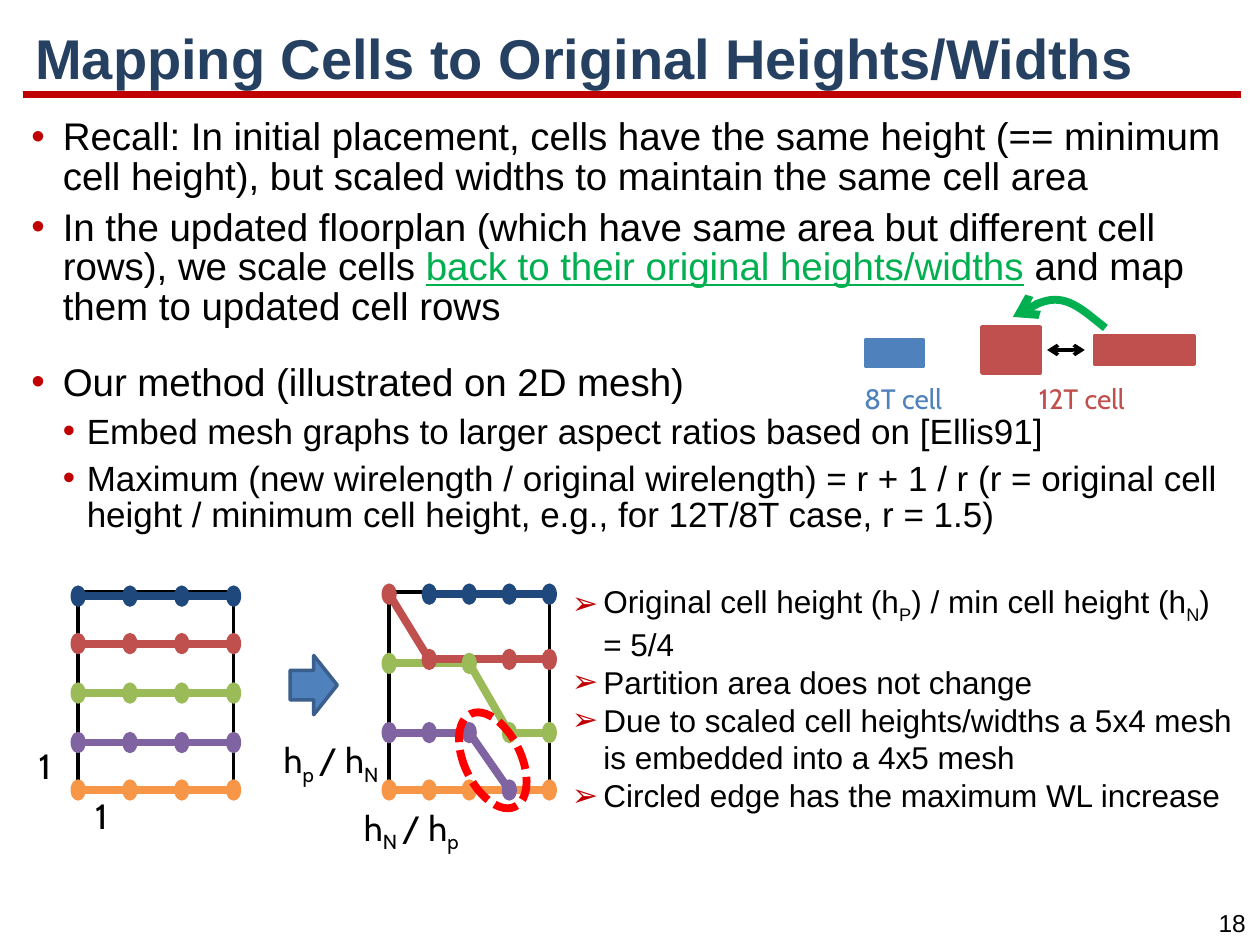
from dataclasses import dataclass

from lxml.etree import SubElement
from pptx import Presentation
from pptx.dml.color import RGBColor
from pptx.enum.dml import MSO_LINE
from pptx.enum.shapes import MSO_CONNECTOR, MSO_SHAPE
from pptx.enum.text import MSO_ANCHOR, MSO_AUTO_SIZE, PP_ALIGN
from pptx.oxml.ns import qn
from pptx.util import Inches, Pt


@dataclass(frozen=True)
class Theme:
    font: str = "Arial"
    label_font: str = "Cabin"
    ink: str = "000000"
    heading: str = "254061"
    accent: str = "C00000"
    emphasis: str = "00B050"
    circle: str = "FF0000"
    navy: str = "1F497D"
    red: str = "C0504D"
    green: str = "9BBB59"
    purple: str = "8064A2"
    orange: str = "F79646"
    blue: str = "4F81BD"
    blue_edge: str = "3A5F8C"
    title: int = 32
    body: int = 22
    sub: int = 20
    notes: int = 18
    cell_label: int = 16
    page: int = 14
    thin: float = 2
    thick: float = 4.5


T = Theme()
SUB = {"base": -25000}


@dataclass(frozen=True)
class Box:
    """Left, top, width and height on a grid of 100 columns by 75 rows."""
    x: float
    y: float
    w: float
    h: float

    def at(self, fx, fy):
        return self.x + fx * self.w, self.y + fy * self.h

    def share(self, fx, fy, fw, fh):
        return Box(*self.at(fx, fy), fw * self.w, fh * self.h)

    def emu(self):
        return [grid(n) for n in (self.x, self.y, self.w, self.h)]


def grid(n):
    return Inches(n / 10)


def rgb(color):
    return RGBColor.from_string(color)


def stroke(line, color, width):
    line.color.rgb = rgb(color)
    line.width = Pt(width)


def arrowheads(shape, *ends):
    ln = shape.line._get_or_add_ln()
    for end in ends:
        SubElement(ln, qn(f"a:{end}"), type="arrow")


def draw(slide, kind, box, fill=None, edge=None, width=T.thin):
    shape = slide.shapes.add_shape(kind, *box.emu())
    shape.shadow.inherit = False
    if fill:
        shape.fill.solid()
        shape.fill.fore_color.rgb = rgb(fill)
    else:
        shape.fill.background()
    if edge:
        stroke(shape.line, edge, width)
    else:
        shape.line.fill.background()
    return shape


def link(slide, start, end, color, width=T.thick):
    connector = slide.shapes.add_connector(
        MSO_CONNECTOR.STRAIGHT, *[grid(n) for n in (*start, *end)])
    stroke(connector.line, color, width)
    SubElement(connector._element.spPr, qn("a:effectLst"))
    return connector


def add_runs(paragraph, runs, size, color=T.ink, font=T.font):
    """Each run is a string, or a string with its own settings."""
    for item in runs:
        words, style = (item, {}) if isinstance(item, str) else item
        if words == "\n":
            paragraph.add_line_break()
            continue
        run = paragraph.add_run()
        run.text = words
        run.font.name, run.font.size = font, Pt(size)
        run.font.color.rgb = rgb(style.get("color", color))
        run.font.underline = style.get("underline")
        if "base" in style:
            run._r.get_or_add_rPr().set("baseline", str(style["base"]))


def bullet(paragraph, mark, left, hang):
    pPr = paragraph._p.get_or_add_pPr()
    pPr.set("marL", str(Inches(left)))
    pPr.set("indent", str(-Inches(hang)))
    SubElement(SubElement(pPr, qn("a:buClr")), qn("a:srgbClr"), val=T.accent)
    SubElement(pPr, qn("a:buFont"), typeface=T.font)
    SubElement(pPr, qn("a:buChar"), char=mark)


def text_frame(slide, box, wrap=True):
    frame = slide.shapes.add_textbox(*box.emu()).text_frame
    frame.word_wrap = wrap
    return frame


def label(slide, box, runs, size=T.sub, color=T.ink):
    add_runs(text_frame(slide, box).paragraphs[0], runs, size, color, T.label_font)


def paragraphs(frame, count):
    return [frame.paragraphs[0]] + [frame.add_paragraph() for _ in range(count - 1)]


def heading(slide, box):
    link(slide, (1.8, 7.5), (98.5, 7.5), T.accent)
    title = slide.shapes.title
    title.left, title.top, title.width, title.height = box.emu()
    frame = title.text_frame
    frame.auto_size = MSO_AUTO_SIZE.NONE
    frame.vertical_anchor = MSO_ANCHOR.MIDDLE
    paragraph = frame.paragraphs[0]
    paragraph.alignment, paragraph.line_spacing = PP_ALIGN.LEFT, 0.9
    add_runs(paragraph, ["Mapping Cells to Original Heights/Widths"], T.title, T.heading)
    paragraph.runs[0].font.bold = True


def main_points(slide, box):
    marked = {"color": T.emphasis, "underline": True}
    points = [
        (0, 7, ["Recall: In initial placement, cells have the same height (== minimum "
                "cell height), but scaled widths to maintain the same cell area"]),
        (0, 7, ["In the updated floorplan (which have same area but different cell rows), "
                "we scale cells ", ("back to their original heights/widths", marked),
                " ", "and map them to updated cell rows"]),
        (0, 21, ["Our method (illustrated on 2D mesh)"]),
        (1, 6.6, ["Embed mesh graphs to larger aspect ratios based on [Ellis91]"]),
        (1, 6.6, ["Maximum (new wirelength / original wirelength) = r + 1 / r (r = original "
                  "cell height / minimum cell height, e.g., for 12T/8T case, r = 1.5)"]),
    ]
    frame = text_frame(slide, box)
    for paragraph, (level, gap, runs) in zip(paragraphs(frame, len(points)), points):
        paragraph.level, paragraph.line_spacing = level, 0.85
        paragraph.space_before = Pt(gap)
        bullet(paragraph, "•", *((0.25, 0.25), (0.44, 0.19))[level])
        add_runs(paragraph, runs, (T.body, T.sub)[level])


def mesh(slide, box, columns, paths):
    """Paths hold a colour and nodes, each a column number and a share of the height."""
    draw(slide, MSO_SHAPE.RECTANGLE, box, edge=T.ink)
    routes = [(color, [box.at(col / (columns - 1), y) for col, y in nodes])
              for color, nodes in paths]
    for color, nodes in reversed(routes):
        for start, end in zip(nodes, nodes[1:]):
            link(slide, start, end, color)
    for color, nodes in routes:
        for x, y in nodes:
            draw(slide, MSO_SHAPE.OVAL, Box(x - 0.6, y - 0.85, 1.2, 1.7), color)


def embedding(slide, box):
    """The 5x4 mesh, the arrow, and the 4x5 mesh that it becomes."""
    colors = (T.navy, T.red, T.green, T.purple, T.orange)
    before = [(color, [(col, y) for col in range(4)])
              for color, y in zip(colors, (0.02, 0.26, 0.51, 0.76, 1))]
    top, upper, middle, lower, base = 0.01, 0.34, 0.36, 0.71, 1
    routes = [
        [(col, top) for col in range(1, 5)],
        [(0, top), (1, upper), (3, upper), (4, upper)],
        [(0, middle), (2, middle), (3, lower), (4, lower)],
        [(0, lower), (1, lower), (2, lower), (3, base)],
        [(0, base), (1, base), (2, base), (4, base)],
    ]
    mesh(slide, box.share(0, 0, 0.33, 1), 4, before)
    mesh(slide, box.share(0.66, 0, 0.34, 1), 5, list(zip(colors, routes)))
    draw(slide, MSO_SHAPE.RIGHT_ARROW, box.share(0.45, 0.32, 0.1, 0.3), T.blue, T.blue_edge)
    circled = draw(slide, MSO_SHAPE.OVAL, box.share(0.82, 0.59, 0.12, 0.52),
                   edge=T.circle, width=T.thick)
    circled.rotation = 334.5
    circled.line.dash_style = MSO_LINE.SQUARE_DOT
    label(slide, box.share(-0.11, 0.74, 0.08, 0.28), ["1"])
    label(slide, box.share(0.01, 0.99, 0.09, 0.28), ["1"])
    label(slide, box.share(0.41, 0.71, 0.28, 0.28), ["h", ("p ", SUB), "/ h", ("N", SUB)])
    label(slide, box.share(0.58, 1.05, 0.27, 0.3), ["h", ("N ", SUB), "/ h", ("p", SUB)])


def bezier(p0, p1, p2, p3, steps=12):
    for t in (i / steps for i in range(1, steps + 1)):
        weights = ((1 - t) ** 3, 3 * t * (1 - t) ** 2, 3 * t * t * (1 - t), t ** 3)
        yield tuple(sum(w * p[axis] for w, p in zip(weights, (p0, p1, p2, p3)))
                    for axis in (0, 1))


def cell_legend(slide, box):
    cells = [((0.04, 0.33, 0.17, 0.21), T.blue), ((0.38, 0.22, 0.17, 0.38), T.red),
             ((0.71, 0.29, 0.29, 0.24), T.red)]
    for bounds, color in cells:
        draw(slide, MSO_SHAPE.RECTANGLE, box.share(*bounds), color, color)
    for words, color, left in (("8T cell", T.blue, 0), ("12T cell", T.red, 0.51)):
        label(slide, box.share(left, 0.62, 0.49, 0.38), [words], T.cell_label, color)
    swap = link(slide, box.at(0.57, 0.41), box.at(0.68, 0.41), T.ink, T.thin)
    arrowheads(swap, "headEnd", "tailEnd")
    start, peak, tip = (box.at(*p) for p in ((0.74, 0.23), (0.6, 0), (0.47, 0.14)))
    curve = [*bezier(start, box.at(0.69, 0.12), box.at(0.65, 0.01), peak),
             *bezier(peak, box.at(0.56, -0.01), box.at(0.51, 0.07), tip)]
    outline = slide.shapes.build_freeform(*[grid(n) for n in start])
    outline.add_line_segments([(grid(x), grid(y)) for x, y in curve], close=False)
    restore = outline.convert_to_shape()
    restore.shadow.inherit = False
    restore.fill.background()
    stroke(restore.line, T.emphasis, T.thick)
    arrowheads(restore, "tailEnd")


def findings(slide, box):
    notes = [
        ["Original cell height (h", ("P", SUB), ") / min cell height (h", ("N", SUB), ") ",
         "\n", "= 5/4"],
        ["Partition area does not change"],
        ["Due to scaled cell heights/widths a 5x4 mesh is embedded into a 4x5 mesh"],
        ["Circled edge has the maximum WL increase"],
    ]
    frame = text_frame(slide, box)
    for paragraph, runs in zip(paragraphs(frame, len(notes)), notes):
        bullet(paragraph, "➢", 0.25, 0.25)
        add_runs(paragraph, runs, T.notes)


def page_number(slide, box):
    paragraph = text_frame(slide, box, wrap=False).paragraphs[0]
    paragraph.alignment = PP_ALIGN.CENTER
    add_runs(paragraph, ["18"], T.page)


def main():
    deck = Presentation()
    deck.slide_width, deck.slide_height = grid(100), grid(75)
    slide = deck.slides.add_slide(deck.slide_layouts[5])
    heading(slide, Box(1.8, 1.6, 96.8, 6.5))
    main_points(slide, Box(1.5, 9, 96.9, 60))
    embedding(slide, Box(6.2, 47, 37.4, 15.7))
    findings(slide, Box(44.4, 45.7, 55.7, 21.2))
    cell_legend(slide, Box(67.6, 23.8, 27.2, 9.7))
    page_number(slide, Box(95.6, 71.6, 4.4, 3.4))
    deck.save("out.pptx")


if __name__ == "__main__":
    main()
